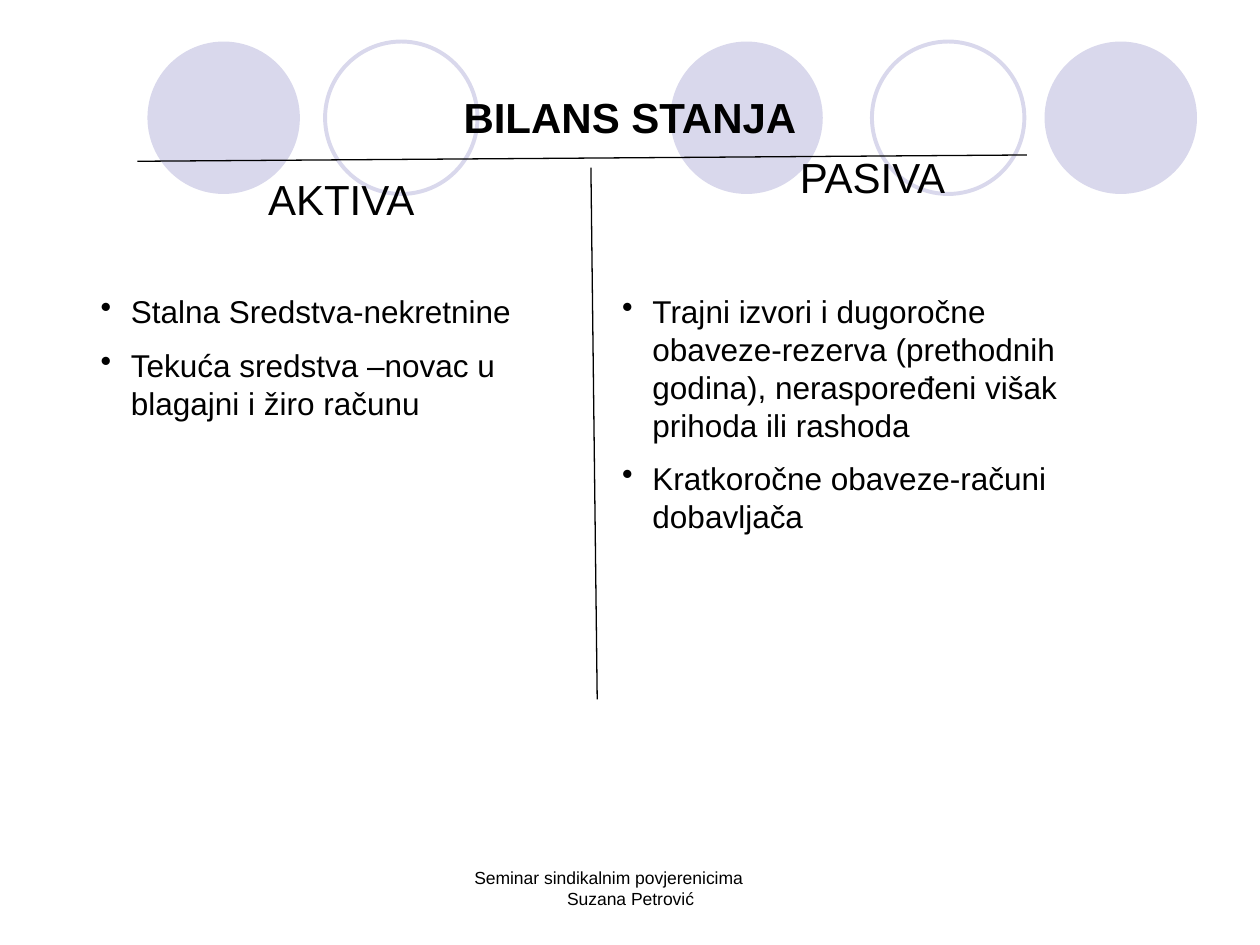
from lxml import etree
from pptx import Presentation
from pptx.dml.color import RGBColor
from pptx.enum.shapes import MSO_CONNECTOR, MSO_SHAPE
from pptx.enum.text import MSO_ANCHOR, PP_ALIGN
from pptx.oxml.ns import qn
from pptx.util import Inches, Pt

ELLIPSE = MSO_SHAPE.OVAL
STRAIGHT = MSO_CONNECTOR.STRAIGHT
LEFT, CENTER = PP_ALIGN.LEFT, PP_ALIGN.CENTER
TOP, MIDDLE = MSO_ANCHOR.TOP, MSO_ANCHOR.MIDDLE

FONT = "Arial"
INK, LILAC = "000000", "D9D8EC"
INSET = 0.1
BULLET_INDENT = 0.24
FOOTER_SHIFT = 0.35

TITLE = "BILANS STANJA"
FOOTER = "Seminar sindikalnim povjerenicima\vSuzana Petrović"
HEADINGS = [
    ("PASIVA", (6.25, 1.15, 2.73, 0.5)),
    ("AKTIVA", (2.03, 1.33, 2.34, 0.5)),
]
LISTS = [
    ((4.84, 2.27, 4.06, 2.07), [
        "Trajni izvori i dugoročne obaveze-rezerva (prethodnih godina), "
        "neraspoređeni višak prihoda ili rashoda",
        "Kratkoročne obaveze-računi dobavljača",
    ]),
    ((0.7, 2.27, 3.75, 1.16), [
        "Stalna Sredstva-nekretnine",
        "Tekuća sredstva –novac u blagajni i žiro računu",
    ]),
]
CIRCLE_TOP, CIRCLE_SIZE = 0.33, 1.21
CIRCLES = [(5.32, True), (8.29, True), (1.17, True), (6.92, False), (2.58, False)]
RULES = [((1.09, 1.28), (8.15, 1.23)), ((4.69, 1.33), (4.74, 5.55))]


def color(value):
    return RGBColor.from_string(value)


def add_circle(shapes, left, filled):
    circle = shapes.add_shape(
        ELLIPSE, *map(Inches, (left, CIRCLE_TOP, CIRCLE_SIZE, CIRCLE_SIZE)))
    circle.shadow.inherit = False
    if filled:
        circle.fill.solid()
        circle.fill.fore_color.rgb = color(LILAC)
        circle.line.fill.background()
    else:
        circle.fill.background()
        circle.line.color.rgb = color(LILAC)
        circle.line.width = Pt(2.25)


def add_rule(shapes, start, end):
    rule = shapes.add_connector(STRAIGHT, *map(Inches, start + end))
    rule.line.color.rgb = color(INK)
    rule.line.width = Pt(0.75)
    etree.SubElement(rule._element.spPr, qn("a:effectLst"))


def add_text(shapes, box, paragraphs, size, bold=False, align=LEFT, anchor=TOP,
             hanging=0, bullet=None, right_inset=INSET):
    frame = shapes.add_textbox(*map(Inches, box)).text_frame
    frame.word_wrap = True
    frame.vertical_anchor = anchor
    frame.margin_right = Inches(right_inset)
    for index, words in enumerate(paragraphs):
        paragraph = frame.add_paragraph() if index else frame.paragraphs[0]
        paragraph.text = words
        paragraph.alignment = align
        if index:
            paragraph.space_before = Pt(size / 2)
        for run in paragraph.runs:
            run.font.name = FONT
            run.font.size = Pt(size)
            run.font.bold = bold
            run.font.color.rgb = color(INK)
        properties = paragraph._p.get_or_add_pPr()
        if hanging:
            properties.set("marL", str(Inches(hanging)))
            properties.set("indent", str(-Inches(hanging)))
        if bullet:
            etree.SubElement(properties, qn("a:buChar"), char=bullet)


def main():
    deck = Presentation()
    deck.slide_width, deck.slide_height = Inches(10), Inches(7.5)
    shapes = deck.slides.add_slide(deck.slide_layouts[6]).shapes

    circle_group = shapes.add_group_shape().shapes
    for left, filled in CIRCLES:
        add_circle(circle_group, left, filled)
    add_text(shapes, (0.5, 0.3, 9, 1.25), [TITLE], 24, bold=True,
             align=CENTER, anchor=MIDDLE)
    for start, end in RULES:
        add_rule(shapes, start, end)
    for box, items in LISTS:
        add_text(shapes, box, items, 18, hanging=BULLET_INDENT, bullet="•")
    for heading, box in HEADINGS:
        add_text(shapes, box, [heading], 24)
    add_text(shapes, (3.42, 6.83, 3.17, 0.5), [FOOTER], 10, align=CENTER,
             hanging=FOOTER_SHIFT, right_inset=INSET + FOOTER_SHIFT)

    deck.save("out.pptx")


if __name__ == "__main__":
    main()
